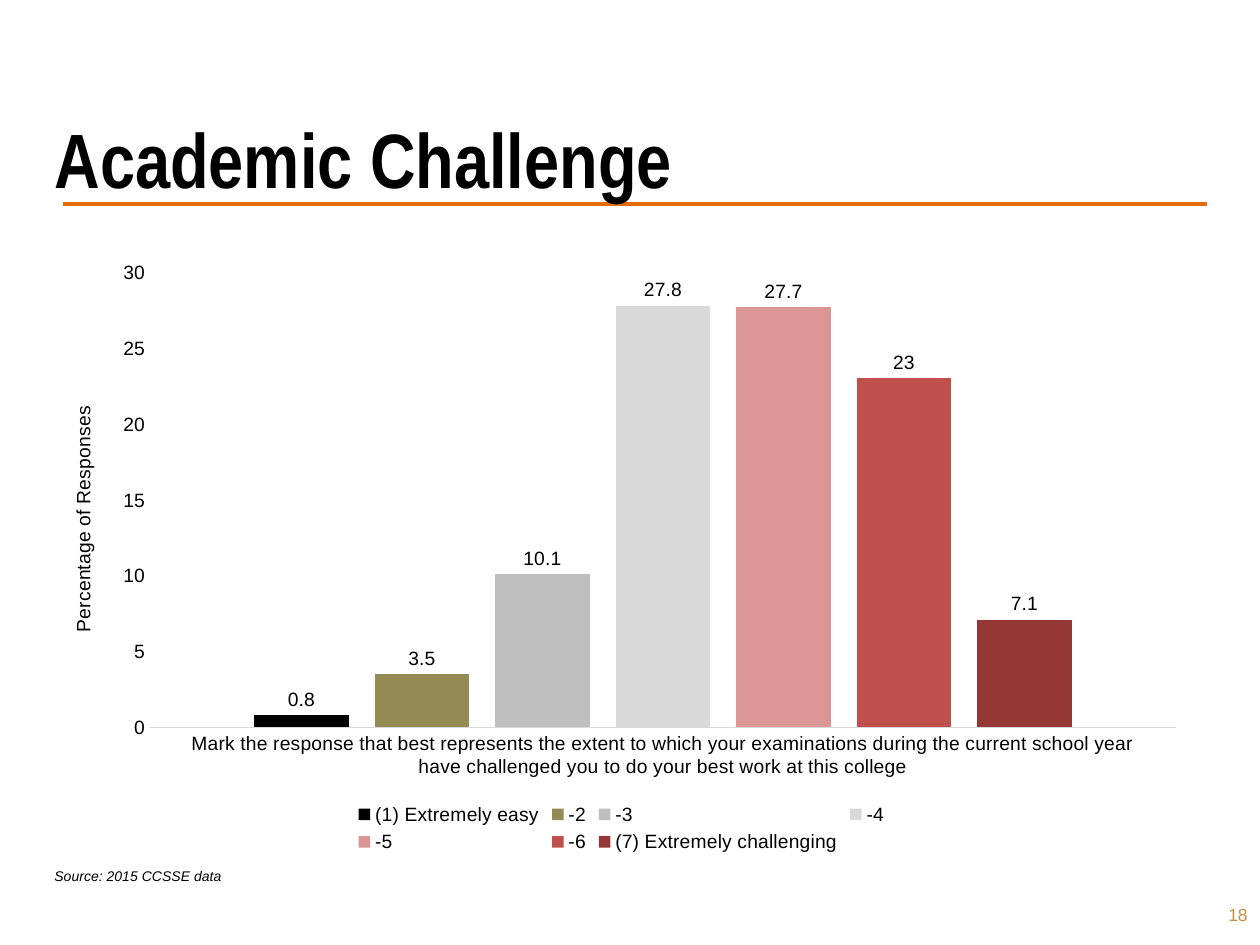
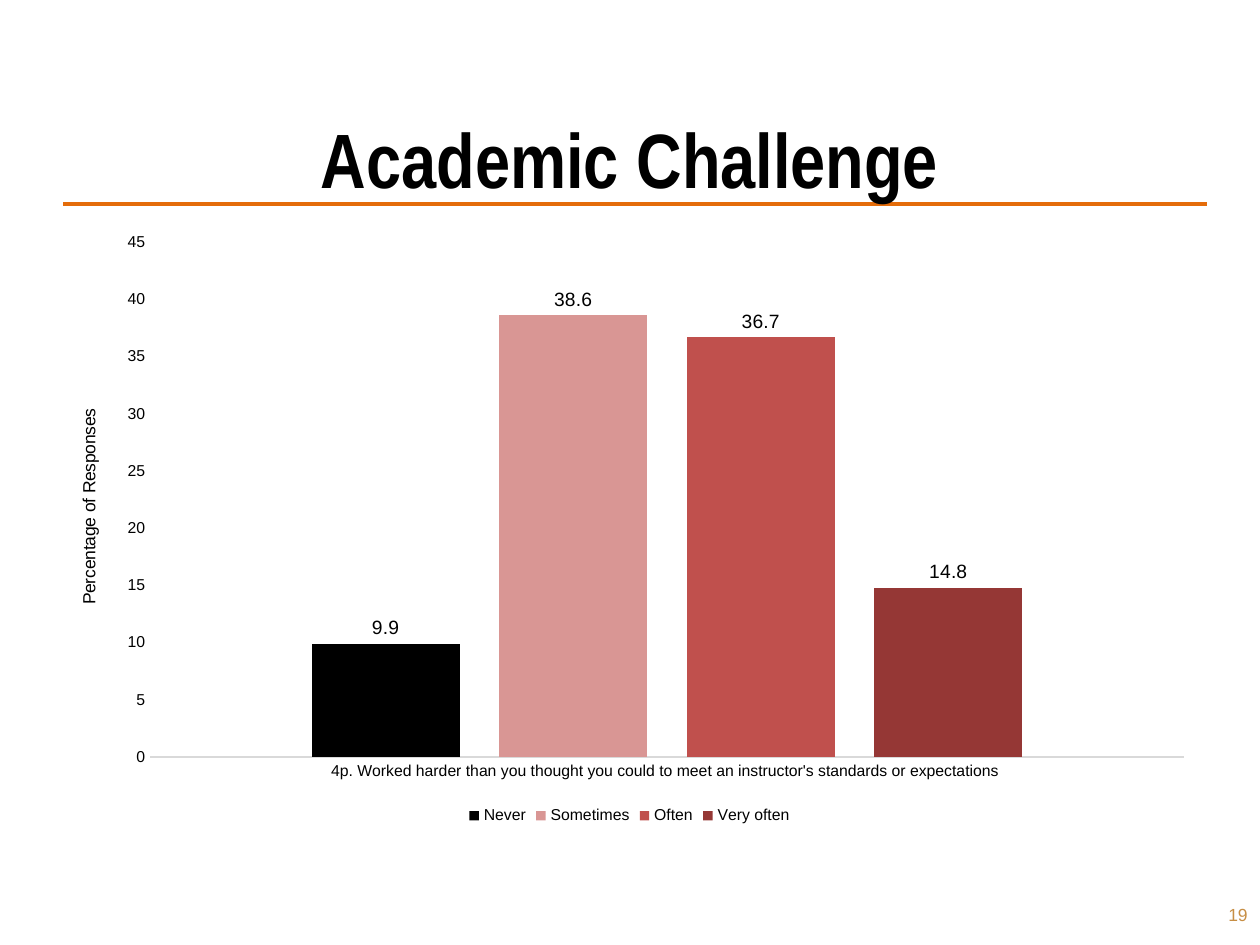
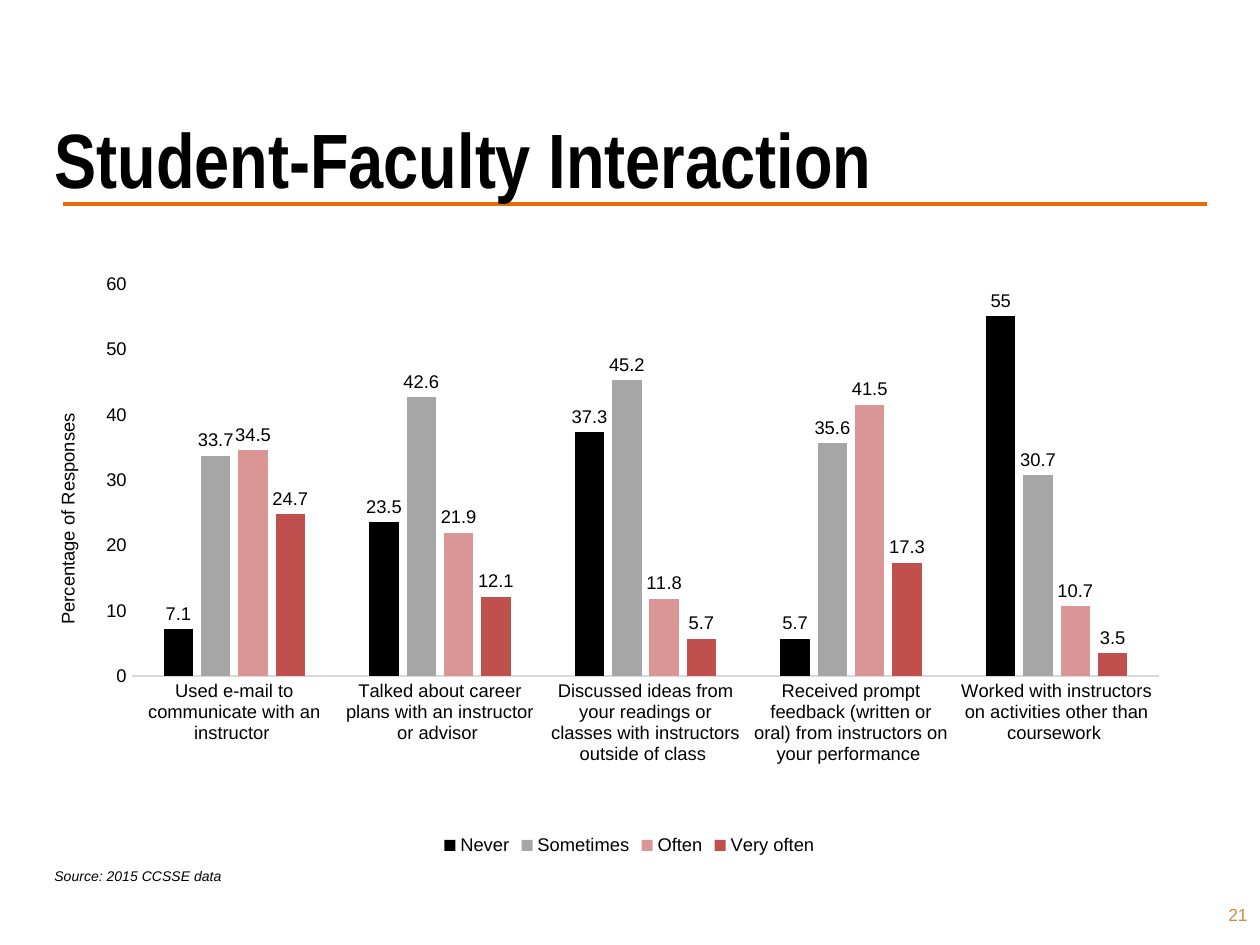
from lxml import etree
from pptx import Presentation
from pptx.chart.data import CategoryChartData
from pptx.dml.color import RGBColor
from pptx.enum.chart import XL_CHART_TYPE, XL_LABEL_POSITION, XL_LEGEND_POSITION, XL_TICK_MARK
from pptx.enum.shapes import MSO_CONNECTOR
from pptx.enum.text import MSO_ANCHOR, MSO_AUTO_SIZE, PP_ALIGN
from pptx.oxml.ns import qn
from pptx.util import Pt

EMU_PER_PX = 914400 / 126
TITLE_ONLY = 5
COLORS = {
    "text": "000000", "rule": "E46C0A", "page": "C78E44", "axis": "D9D9D9",
    "black": "000000", "olive": "948A54", "silver": "BFBFBF", "pale": "D9D9D9",
    "grey": "A6A6A6", "pink": "D99694", "red": "C0504D", "maroon": "953735",
}
TITLE_BOX = (42, 68, 1176, 142)
PAGE_BOX = (1176, 892, 84, 44)
SOURCE_BOX = (42, 861, 252, 31)
SOURCE = "Source: 2015 CCSSE data"
VALUE_TITLE = "Percentage of Responses"

# Each chart: box in px, text sizes in points, value scale, data
CHALLENGE_CHART = {
    "box": (44, 249, 1155, 609),
    "sizes": {"axis": 11, "title": 11, "label": 11}, "maximum": 30, "step": 5,
    "categories": ["Mark the response that best represents the extent to which your "
                   "examinations during the current school year have challenged you "
                   "to do your best work at this college"],
    "series": [
        ("(1) Extremely easy", "black", [0.8]), ("-2", "olive", [3.5]),
        ("-3", "silver", [10.1]), ("-4", "pale", [27.8]), ("-5", "pink", [27.7]),
        ("-6", "red", [23]), ("(7) Extremely challenging", "maroon", [7.1]),
    ],
}
EFFORT_CHART = {
    "box": (52, 221, 1155, 609),
    "sizes": {"axis": 9, "title": 10, "label": 11}, "maximum": 45, "step": 5,
    "categories": ["4p. Worked harder than you thought you could to meet an "
                   "instructor's standards or expectations "],
    "series": [
        ("Never", "black", [9.9]), ("Sometimes", "pink", [38.6]),
        ("Often", "red", [36.7]), ("Very often", "maroon", [14.8]),
    ],
}
INTERACTION_CHART = {
    "box": (52, 221, 1155, 640), "plot": (132, 284, 1028, 392),
    "sizes": {"axis": 10.5, "title": 10.5, "label": 10.5}, "maximum": 60, "step": 10,
    "categories": [
        "Used e-mail to communicate with an instructor ",
        "Talked about career plans with an instructor or advisor ",
        "Discussed ideas from your readings or classes with instructors outside of class ",
        "Received prompt feedback (written or oral) from instructors on your performance ",
        "Worked with instructors on activities other than coursework ",
    ],
    "series": [
        ("Never", "black", [7.1, 23.5, 37.3, 5.7, 55]),
        ("Sometimes", "grey", [33.7, 42.6, 45.2, 35.6, 30.7]),
        ("Often", "pink", [34.5, 21.9, 11.8, 41.5, 10.7]),
        ("Very often", "red", [24.7, 12.1, 5.7, 17.3, 3.5]),
    ],
}


def px(*lengths):
    return [round(length * EMU_PER_PX) for length in lengths]


def rgb(name):
    return RGBColor.from_string(COLORS[name])


def set_font(font, size, color="text", name="Arial", bold=False, italic=False):
    font.name, font.size = name, Pt(size)
    font.bold, font.italic = bold, italic
    font.color.rgb = rgb(color)


def add_rule(slide):
    rule = slide.shapes.add_connector(MSO_CONNECTOR.STRAIGHT, *px(63, 204, 1207, 204))
    rule.line.color.rgb = rgb("rule")
    rule.line.width = Pt(2.25)
    etree.SubElement(rule._element.spPr, qn("a:effectLst"))
    # Send the rule behind the title, whose descenders overlap it
    slide.shapes._spTree.insert(2, rule._element)


def set_title(slide, text, alignment):
    title = slide.shapes.title
    title.left, title.top, title.width, title.height = px(*TITLE_BOX)
    frame = title.text_frame
    frame.text = text
    frame.word_wrap = True
    frame.auto_size = MSO_AUTO_SIZE.NONE
    frame.vertical_anchor = MSO_ANCHOR.BOTTOM
    paragraph = frame.paragraphs[0]
    paragraph.alignment = alignment
    paragraph.line_spacing = Pt(44)
    set_font(paragraph.font, 44, name="Arial Narrow", bold=True)


def add_text(slide, box, text, alignment, anchor, size, **style):
    frame = slide.shapes.add_textbox(*px(*box)).text_frame
    frame.word_wrap = True
    frame.vertical_anchor = anchor
    paragraph = frame.paragraphs[0]
    paragraph.text = text
    paragraph.alignment = alignment
    set_font(paragraph.font, size, **style)


def place_plot(chart, box, plot):
    """Fix the inner plot area as fractions of the chart box."""
    left, top, width, height = box
    fractions = {
        "x": (plot[0] - left) / width, "y": (plot[1] - top) / height,
        "w": plot[2] / width, "h": plot[3] / height,
    }
    plot_area = chart._chartSpace.chart.plotArea
    for old_layout in plot_area.findall(qn("c:layout")):
        plot_area.remove(old_layout)
    layout = etree.Element(qn("c:layout"))
    manual = etree.SubElement(layout, qn("c:manualLayout"))
    settings = [("layoutTarget", "inner"), ("xMode", "edge"), ("yMode", "edge")]
    settings += [(key, f"{value:.3f}") for key, value in fractions.items()]
    for tag, value in settings:
        etree.SubElement(manual, qn(f"c:{tag}")).set("val", value)
    plot_area.insert(0, layout)


def style_axes(chart, sizes, maximum, step):
    category_axis, value_axis = chart.category_axis, chart.value_axis
    for axis in (category_axis, value_axis):
        axis.major_tick_mark = axis.minor_tick_mark = XL_TICK_MARK.NONE
        axis.has_major_gridlines = False
        set_font(axis.tick_labels.font, sizes["axis"])
    category_axis.format.line.color.rgb = rgb("axis")
    category_axis.format.line.width = Pt(0.75)
    value_axis.format.line.fill.background()
    value_axis.minimum_scale, value_axis.maximum_scale = 0, maximum
    value_axis.major_unit = step
    frame = value_axis.axis_title.text_frame
    frame.text = VALUE_TITLE
    set_font(frame.paragraphs[0].font, sizes["title"])


def add_column_chart(slide, box, sizes, maximum, step, categories, series, plot=None):
    data = CategoryChartData()
    data.categories = categories
    for name, _, values in series:
        data.add_series(name, values)
    chart = slide.shapes.add_chart(XL_CHART_TYPE.COLUMN_CLUSTERED, *px(*box), data).chart
    chart.has_title = False
    set_font(chart.font, sizes["title"])
    if plot:
        place_plot(chart, box, plot)
    style_axes(chart, sizes, maximum, step)

    # Columns with their values above
    columns = chart.plots[0]
    columns.gap_width, columns.overlap = 219, -27
    columns.vary_by_categories = False
    for column, (_, color, _) in zip(columns.series, series):
        column.format.fill.solid()
        column.format.fill.fore_color.rgb = rgb(color)
        labels = column.data_labels
        labels.show_value = True
        labels.position = XL_LABEL_POSITION.OUTSIDE_END
        set_font(labels.font, sizes["label"])

    chart.has_legend = True
    chart.legend.position = XL_LEGEND_POSITION.BOTTOM
    chart.legend.include_in_layout = False
    set_font(chart.legend.font, sizes["axis"])


def add_chart_slide(presentation, title, page, chart, alignment=PP_ALIGN.LEFT, source=SOURCE):
    slide = presentation.slides.add_slide(presentation.slide_layouts[TITLE_ONLY])
    add_rule(slide)
    set_title(slide, title, alignment)
    add_column_chart(slide, **chart)
    add_text(slide, PAGE_BOX, page, PP_ALIGN.RIGHT, MSO_ANCHOR.MIDDLE, 10, color="page")
    if source:
        add_text(slide, SOURCE_BOX, source, PP_ALIGN.LEFT, MSO_ANCHOR.TOP, 8, italic=True)


def main():
    presentation = Presentation()
    presentation.slide_width, presentation.slide_height = px(1260, 945)
    add_chart_slide(presentation, "Academic Challenge", "18", CHALLENGE_CHART)
    add_chart_slide(presentation, "Academic Challenge", "19", EFFORT_CHART,
                    alignment=PP_ALIGN.CENTER, source=None)
    add_chart_slide(presentation, "Student-Faculty Interaction", "21", INTERACTION_CHART)
    presentation.save("out.pptx")


if __name__ == "__main__":
    main()
